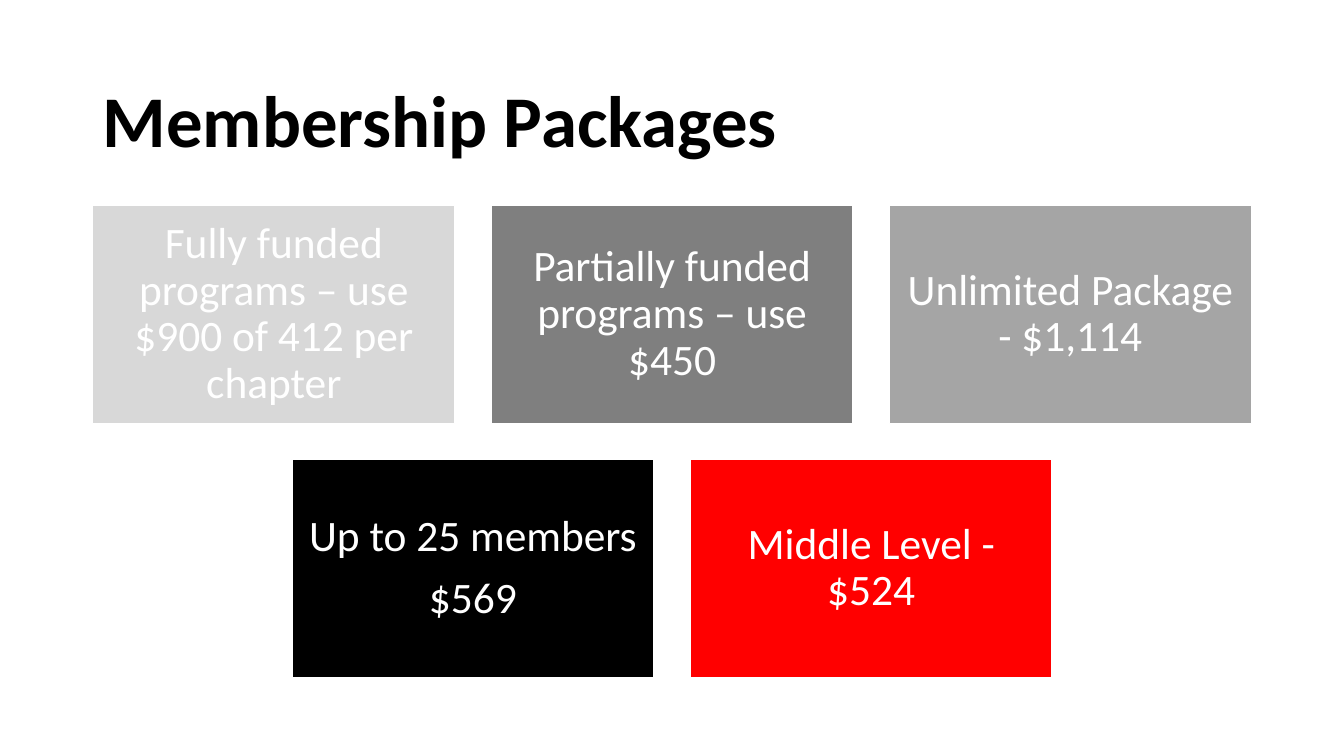
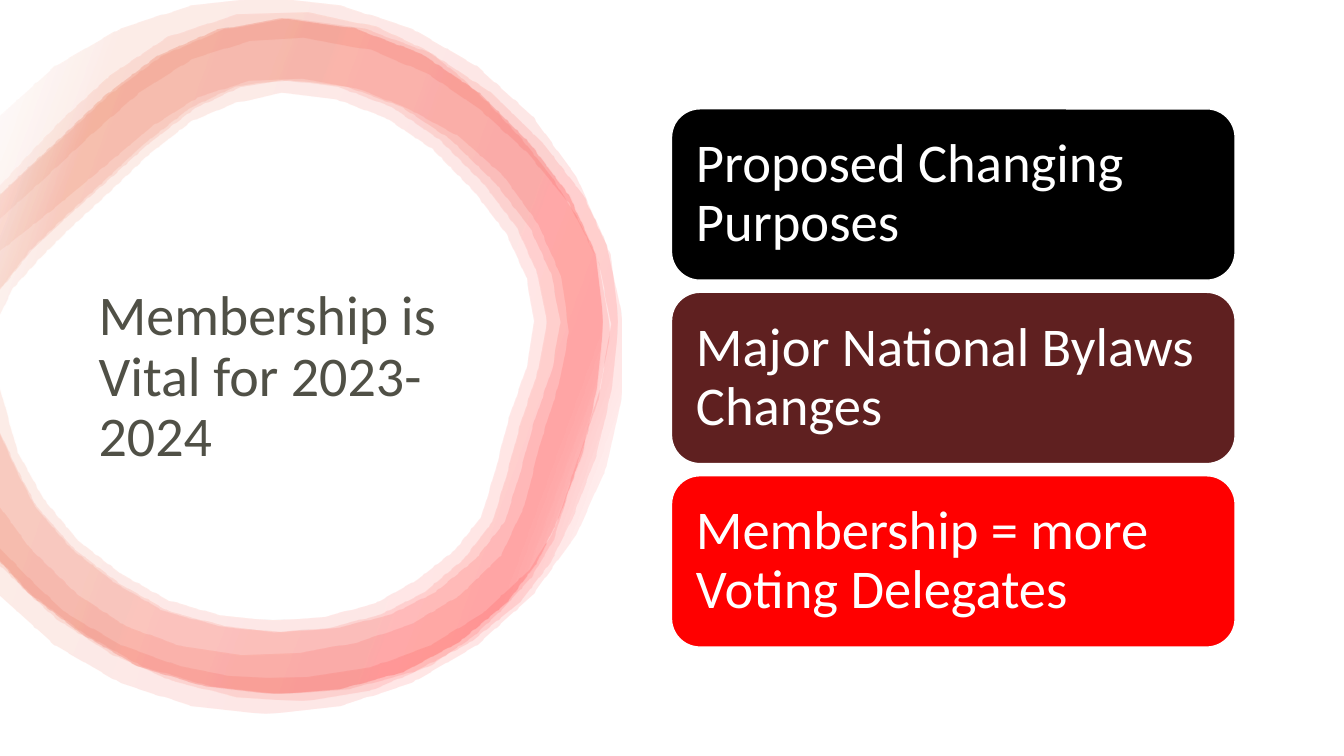
import math

import lxml.etree
import pptx
import pptx.dml.color
import pptx.enum.shapes
import pptx.enum.text
import pptx.oxml.ns
import pptx.util

Inches = pptx.util.Inches
Kinds = pptx.enum.shapes.MSO_SHAPE

BLACK, WHITE, RED, MAROON, OLIVE = "000000", "FFFFFF", "FF0000", "5F2020", "505046"
GLOW = [(2, WHITE), (16, RED), (85, "E84C22"), (100, WHITE)]
GLOW_OPACITY = 10
NARROWING = 0.976
LONGEST_EDGE = 0.75

PACKAGES = [
    (["Fully funded programs – use $900 of 412 per chapter"], "D8D8D8"),
    (["Partially funded programs – use $450"], "7F7F7F"),
    (["Unlimited Package - $1,114"], "A5A5A5"),
    (["Up to 25 members", "$569"], BLACK),
    (["Middle Level - $524"], RED),
]
CHANGES = [
    (["Proposed Changing Purposes"], BLACK),
    (["Major National Bylaws Changes"], MAROON),
    (["Membership = more Voting Delegates"], RED),
]

WAVY_OUTER = [
    (0, 1.84), (0.61, 1.19), (1.09, 0.75), (1.66, 0.37), (2.34, 0.15),
    (3.05, 0.13), (3.73, 0.27), (4.24, 0.51), (4.84, 1.03), (5.47, 1.76),
    (5.94, 2.62), (6.05, 3.29), (5.93, 3.96), (5.7, 4.67), (5.49, 5.35), (5.27, 5.72),
    (4.69, 6.31), (4.28, 6.59), (3.66, 6.85), (3, 6.95), (2.34, 6.91), (1.7, 6.75),
    (1.11, 6.49), (0.56, 6.14), (0, 5.61),
]
WAVY_INNER = [
    (0, 5.03), (0.29, 5.43), (0.76, 5.89), (1.25, 6.21), (1.81, 6.41), (2.39, 6.49),
    (2.97, 6.47), (3.53, 6.37), (4.07, 6.19), (4.56, 5.9), (4.97, 5.5), (5.2, 5.01),
    (5.35, 4.41), (5.54, 3.81), (5.64, 3.29), (5.56, 2.74), (5.33, 2.22), (4.99, 1.75),
    (4.55, 1.36), (4.04, 1.08), (3.53, 0.88), (2.99, 0.79), (2.46, 0.81), (1.96, 0.97),
    (1.5, 1.26), (1.05, 1.64), (0.57, 2.04), (0, 2.49),
]
SMOOTH_OUTER = [
    (0, 1.93), (0.59, 1.39), (1.6, 0.55), (2.86, 0.18), (4.28, 0.53), (5.38, 1.42),
    (6.05, 2.52), (6.06, 3.86), (5.67, 5.14), (5.15, 5.97), (4.1, 6.66), (2.79, 6.88),
    (1.41, 6.61), (0.29, 5.88), (0, 5.56),
]
SMOOTH_INNER = [
    (0, 4.29), (0.36, 5.02), (0.73, 5.44), (1.67, 6.06), (2.79, 6.27),
    (3.36, 6.22), (3.87, 6.09), (4.31, 5.87), (4.71, 5.54), (5, 5.17), (5.14, 4.72),
    (5.28, 4.21), (5.47, 3.65), (5.55, 3.19), (5.46, 2.72), (5.25, 2.26), (4.91, 1.82),
    (4.46, 1.38), (3.98, 1.06), (3.44, 0.86), (2.86, 0.79), (2.38, 0.86), (1.93, 1.07),
    (1.46, 1.43), (1.03, 1.82), (0.31, 2.48), (0, 2.87),
]
TIGHT_INNER = [
    (0, 3.83), (0.18, 4.48), (0.44, 4.95), (0.78, 5.36), (1.67, 5.95), (2.71, 6.15),
    (3.72, 5.98), (4.51, 5.45), (4.77, 5.12), (4.9, 4.69), (5.04, 4.15), (5.23, 3.6),
    (5.29, 3.18), (5.22, 2.76), (5.02, 2.32), (4.7, 1.9), (4.29, 1.48), (3.83, 1.17),
    (3.33, 0.98), (2.79, 0.92), (1.9, 1.2), (1.08, 1.91), (0.69, 2.27), (0.13, 2.86),
    (0, 3.13),
]
CIRCLE_OUTER = [
    (2.63 + 3.55 * math.cos(math.radians(turn)), 3.53 + 3.55 * math.sin(math.radians(turn)))
    for turn in range(-138, 139, 12)
]
CIRCLE_INNER = [
    (0, 5.44), (0.65, 6.08), (1.2, 6.4), (1.79, 6.61), (2.26, 6.7),
    (3.04, 6.71), (3.66, 6.62), (4.24, 6.41), (4.78, 6.08), (5.24, 5.65),
    (5.49, 5.25), (5.64, 4.79), (5.94, 3.85), (6.05, 3.22), (5.92, 2.59), (5.63, 2.02),
    (5.22, 1.52), (4.75, 1.09), (4.24, 0.74), (3.67, 0.5), (3, 0.38), (2.47, 0.41),
    (1.9, 0.59), (1.38, 0.92), (0.9, 1.34), (0.42, 1.79), (0, 2.17),
]


def rgb(value):
    return pptx.dml.color.RGBColor.from_string(value)


def narrowed(points):
    return [(x * NARROWING, y) for x, y in points]


def smoothed(points):
    last = len(points) - 1
    tangents = []
    for i in range(last + 1):
        (x0, y0), (x1, y1) = points[max(i - 1, 0)], points[min(i + 1, last)]
        reach = math.hypot(x1 - x0, y1 - y0)
        tangents.append(((x1 - x0) / reach, (y1 - y0) / reach))
    curve = [points[0]]
    for i in range(last):
        start, end = points[i], points[i + 1]
        chord = math.dist(start, end)
        steps = math.ceil(chord / LONGEST_EDGE)
        for step in range(1, steps + 1):
            t = step / steps
            weights = (2 * t**3 - 3 * t**2 + 1, 3 * t**2 - 2 * t**3,
                       chord * (t**3 - 2 * t**2 + t), chord * (t**3 - t**2))
            parts = (start, end, tangents[i], tangents[i + 1])
            curve.append(tuple(sum(w * p[axis] for w, p in zip(weights, parts))
                               for axis in (0, 1)))
    return curve


def write(frame, paragraphs, size, color, font="Calibri", bold=False, align="LEFT",
          after=0, inset=None):
    frame.word_wrap = True
    frame.vertical_anchor = pptx.enum.text.MSO_ANCHOR.MIDDLE
    if inset is not None:
        frame.margin_left = frame.margin_right = Inches(inset)
        frame.margin_top = frame.margin_bottom = Inches(inset)
    for i, words in enumerate(paragraphs):
        paragraph = frame.add_paragraph() if i else frame.paragraphs[0]
        paragraph.alignment = getattr(pptx.enum.text.PP_ALIGN, align)
        paragraph.line_spacing = 0.9
        paragraph.space_after = pptx.util.Pt(after)
        run = paragraph.add_run()
        run.text = words
        run.font.name = font
        run.font.size = pptx.util.Pt(size)
        run.font.bold = bold
        run.font.color.rgb = rgb(color)


class Deck:
    def __init__(self):
        self.show = pptx.Presentation()
        self.show.slide_width = Inches(13.33)
        self.show.slide_height = Inches(7.5)
        self.slide = None

    def new_slide(self):
        self.slide = self.show.slides.add_slide(self.show.slide_layouts[6])

    def title(self, words, box, **style):
        heading = self.slide.shapes.add_textbox(*map(Inches, box))
        write(heading.text_frame, [words], **style)

    def card(self, kind, paragraphs, box, fill, **style):
        card = self.slide.shapes.add_shape(kind, *map(Inches, box))
        card.shadow.inherit = False
        card.fill.solid()
        card.fill.fore_color.rgb = rgb(fill)
        card.line.color.rgb = rgb(WHITE)
        card.line.width = pptx.util.Pt(1)
        write(card.text_frame, paragraphs, color=WHITE, **style)

    def band(self, outer, inner):
        outline = [(Inches(x), Inches(y)) for x, y in smoothed(outer) + smoothed(inner)]
        builder = self.slide.shapes.build_freeform(*outline[0])
        builder.add_line_segments(outline[1:], close=True)
        band = builder.convert_to_shape()
        band.shadow.inherit = False
        band.line.fill.background()
        band.fill.gradient()
        band.fill.gradient_angle = 160
        qn = pptx.oxml.ns.qn
        stops = next(band._element.iter(qn("a:gsLst")))
        stops.clear()
        for position, color in GLOW:
            stop = lxml.etree.SubElement(stops, qn("a:gs"), pos=str(position * 1000))
            tint = lxml.etree.SubElement(stop, qn("a:srgbClr"), val=color)
            lxml.etree.SubElement(tint, qn("a:alpha"), val=str(GLOW_OPACITY * 1000))


def packages_slide(deck):
    deck.new_slide()
    deck.title("Membership Packages", (0.92, 0.61, 11.5, 1.24), size=52, color=BLACK, bold=True)
    width, height, gap, columns = 3.59, 2.16, 0.36, 3
    for i, (paragraphs, fill) in enumerate(PACKAGES):
        row, column = divmod(i, columns)
        in_row = min(columns, len(PACKAGES) - row * columns)
        left = 0.92 + (column + (columns - in_row) / 2) * (width + gap)
        top = 2.04 + row * (height + gap)
        deck.card(Kinds.RECTANGLE, paragraphs, (left, top, width, height), fill,
                  size=31, align="CENTER", after=11, inset=0.13)


def changes_slide(deck):
    deck.new_slide()
    for outer, inner in [
        (WAVY_OUTER, WAVY_INNER),
        (SMOOTH_OUTER, SMOOTH_INNER),
        (narrowed(SMOOTH_OUTER), TIGHT_INNER),
        (narrowed(SMOOTH_OUTER), narrowed(SMOOTH_INNER)),
        (CIRCLE_OUTER, CIRCLE_INNER),
    ]:
        deck.band(outer, inner)
    deck.title("Membership is Vital for 2023-2024", (0.88, 2.21, 4, 3.08), size=40, color=OLIVE)
    for i, (paragraphs, fill) in enumerate(CHANGES):
        deck.card(Kinds.ROUNDED_RECTANGLE, paragraphs, (6.66, 1.08 + i * 1.82, 5.59, 1.7), fill,
                  size=39, after=14, inset=0.16)


def main():
    deck = Deck()
    packages_slide(deck)
    changes_slide(deck)
    deck.show.save("out.pptx")


if __name__ == "__main__":
    main()
